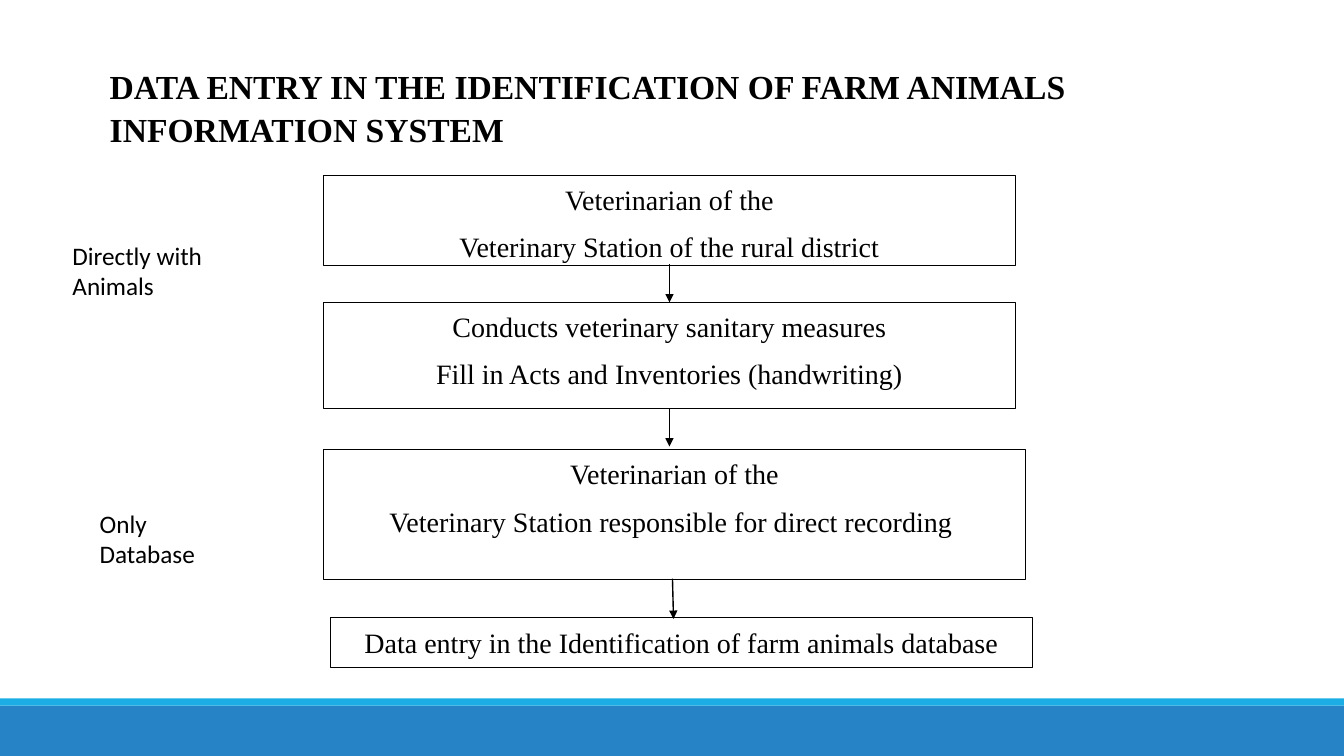
import pptx
import pptx.util
import pptx.dml.color
import pptx.enum.shapes
import pptx.enum.text
from lxml import etree
from pptx.util import Inches

BLACK = pptx.dml.color.RGBColor(0x00, 0x00, 0x00)
WHITE = pptx.dml.color.RGBColor(0xFF, 0xFF, 0xFF)
BLUE = pptx.dml.color.RGBColor(0x26, 0x83, 0xC6)
CYAN = pptx.dml.color.RGBColor(0x1C, 0xAD, 0xE4)
SERIF = "Times New Roman"
RECTANGLE = pptx.enum.shapes.MSO_SHAPE.RECTANGLE

deck = pptx.Presentation()
deck.slide_width = Inches(13.33)
deck.slide_height = Inches(7.5)
slide = deck.slides.add_slide(deck.slide_layouts[6])


def add_rectangle(left, top, width, height, fill):
    rectangle = slide.shapes.add_shape(
        RECTANGLE, Inches(left), Inches(top), Inches(width), Inches(height))
    rectangle.shadow.inherit = False
    rectangle.fill.solid()
    rectangle.fill.fore_color.rgb = fill
    rectangle.line.fill.background()
    return rectangle


def write_lines(frame, lines, font, size, bold=False, align=None, after=0, spacing=1.0):
    """Write one paragraph per line, anchored at the top."""
    frame.vertical_anchor = pptx.enum.text.MSO_ANCHOR.TOP
    for index, line in enumerate(lines):
        paragraph = frame.add_paragraph() if index else frame.paragraphs[0]
        paragraph.alignment = align
        paragraph.space_after = pptx.util.Pt(after)
        paragraph.line_spacing = spacing
        run = paragraph.add_run()
        run.text = line
        run.font.name = font
        run.font.size = pptx.util.Pt(size)
        run.font.bold = bold
        run.font.color.rgb = BLACK


# Footer bands
add_rectangle(0, 7, 13.33, 0.5, BLUE)
add_rectangle(0, 6.93, 13.33, 0.07, CYAN)

# Title
title = slide.shapes.add_textbox(Inches(0.99), Inches(0.58), Inches(9.87), Inches(0.91))
title.text_frame.word_wrap = False
write_lines(title.text_frame,
            ["DATA ENTRY IN THE IDENTIFICATION OF FARM ANIMALS", "INFORMATION SYSTEM"],
            SERIF, 24, bold=True, spacing=1.07)

# Process steps
steps = [
    (3.21, 1.74, 6.86, 0.89,
     ["Veterinarian of the", "Veterinary Station of the rural district"]),
    (3.21, 3, 6.86, 1.05,
     ["Conducts veterinary sanitary measures", "Fill in Acts and Inventories (handwriting)"]),
    (3.21, 4.46, 6.96, 1.29,
     ["Veterinarian of the", "Veterinary Station responsible for direct recording "]),
    (3.28, 6.13, 6.96, 0.49,
     ["Data entry in the Identification of farm animals database"]),
]
for left, top, width, height, lines in steps:
    step = add_rectangle(left, top, width, height, WHITE)
    step.line.color.rgb = BLACK
    step.line.width = pptx.util.Pt(0.75)
    step.text_frame.word_wrap = True
    write_lines(step.text_frame, lines, SERIF, 20,
                align=pptx.enum.text.PP_ALIGN.CENTER, after=8, spacing=1.07)

# Arrows between the steps
for x1, y1, x2, y2 in [(6.64, 2.62, 6.64, 3), (6.64, 4.05, 6.64, 4.43), (6.67, 5.74, 6.68, 6.14)]:
    arrow = slide.shapes.add_connector(
        pptx.enum.shapes.MSO_CONNECTOR.STRAIGHT, Inches(x1), Inches(y1), Inches(x2), Inches(y2))
    arrow.line.color.rgb = BLACK
    arrow.line.width = pptx.util.Pt(1)
    tail = etree.SubElement(arrow.line._get_or_add_ln(), pptx.oxml.ns.qn("a:tailEnd"))
    tail.set("type", "triangle")
    etree.SubElement(arrow._element.spPr, pptx.oxml.ns.qn("a:effectLst"))

# Side labels
for left, top, label in [(0.62, 2.33, "Directly with Animals"), (0.89, 4.99, "Only Database")]:
    side_label = slide.shapes.add_textbox(Inches(left), Inches(top), Inches(1.61), Inches(0.71))
    side_label.text_frame.word_wrap = True
    write_lines(side_label.text_frame, [label], "Calibri", 18)

deck.save("out.pptx")
